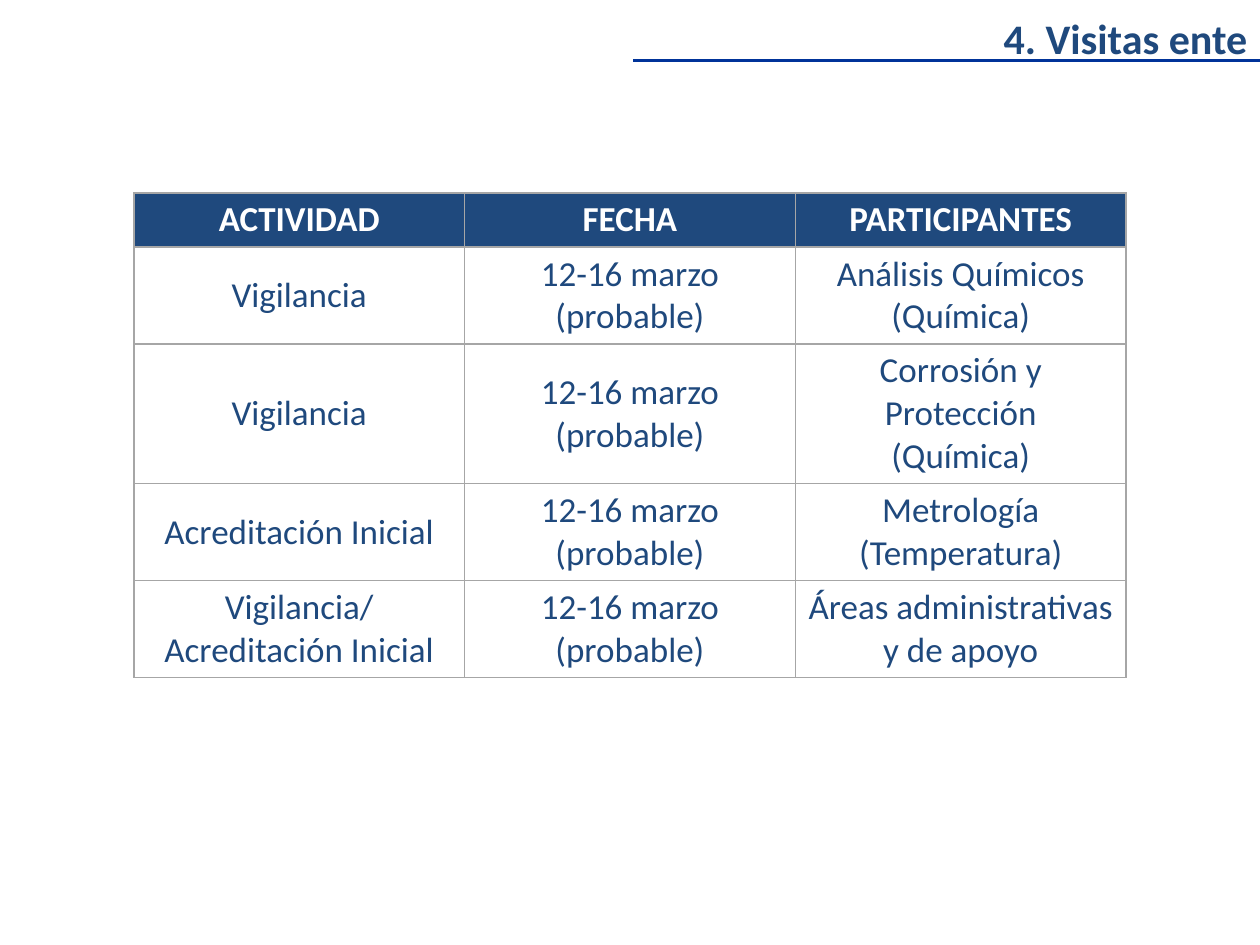
from lxml import etree
from pptx import Presentation
from pptx.dml.color import RGBColor
from pptx.enum.shapes import MSO_CONNECTOR
from pptx.enum.text import MSO_ANCHOR, MSO_AUTO_SIZE, PP_ALIGN
from pptx.oxml import parse_xml
from pptx.oxml.ns import nsdecls, qn
from pptx.util import Pt

STRAIGHT = MSO_CONNECTOR.STRAIGHT
TOP, MIDDLE = MSO_ANCHOR.TOP, MSO_ANCHOR.MIDDLE
CENTER, RIGHT = PP_ALIGN.CENTER, PP_ALIGN.RIGHT
NO_AUTOFIT = MSO_AUTO_SIZE.NONE

NAVY, RULE_BLUE, GREY, WHITE = "1F497D", "003399", "A6A6A6", "FFFFFF"
TITLE_ONLY = 5
COLUMN_WIDTH = 189
ROW_HEIGHTS = [31, 55.2, 79, 55.2, 55.2]
PROBABLE_DATE = "12-16 marzo\n(probable)"
HEADINGS = ["ACTIVIDAD", "FECHA", "PARTICIPANTES"]
VISITS = [
    ("Vigilancia", "Análisis Químicos\n(Química)"),
    ("Vigilancia", "Corrosión y Protección\n(Química)"),
    ("Acreditación Inicial", "Metrología\n(Temperatura)"),
    ("Vigilancia/ Acreditación Inicial", "Áreas administrativas y de apoyo"),
]


def color(hex_code):
    """Return the colour for a hex string."""
    return RGBColor.from_string(hex_code)


def write(frame, text, size=20, ink=NAVY, bold=False, align=CENTER):
    """Write text into a frame, one paragraph for each line."""
    frame.text = text
    for paragraph in frame.paragraphs:
        paragraph.alignment = align
        font = paragraph.runs[0].font
        font.name, font.size, font.bold = "Calibri", Pt(size), bold
        font.color.rgb = color(ink)


def add_heading(slide, text):
    """Place the slide title at the top right."""
    title = slide.shapes.title
    title.left, title.top = Pt(360), Pt(3.6)
    title.width, title.height = Pt(360), Pt(36)
    frame = title.text_frame
    frame.word_wrap, frame.auto_size = True, NO_AUTOFIT
    frame.vertical_anchor = TOP
    write(frame, text, size=24, bold=True, align=RIGHT)


def add_rule(slide):
    """Draw the line under the title."""
    rule = slide.shapes.add_connector(STRAIGHT, Pt(720), Pt(34.5), Pt(361.5), Pt(34.5))
    rule.line.color.rgb = color(RULE_BLUE)
    rule.line.width = Pt(1.5)
    etree.SubElement(rule._element.spPr, qn("a:effectLst"))


def add_borders(cell):
    """Give a cell a thin grey border on every side."""
    properties = cell._tc.get_or_add_tcPr()
    for side in ("lnL", "lnR", "lnT", "lnB"):
        properties.append(parse_xml(
            f'<a:{side} {nsdecls("a")} w="{Pt(1)}"><a:solidFill>'
            f'<a:srgbClr val="{GREY}"/></a:solidFill></a:{side}>'))


def fill_cell(cell, text, is_header):
    """Format one table cell and write its text."""
    cell.margin_left = cell.margin_right = Pt(6.4)
    cell.margin_top = cell.margin_bottom = Pt(3.2)
    cell.vertical_anchor = TOP if is_header else MIDDLE
    add_borders(cell)
    if is_header:
        cell.fill.solid()
        cell.fill.fore_color.rgb = color(NAVY)
    else:
        cell.fill.background()
    write(cell.text_frame, text, ink=WHITE if is_header else NAVY, bold=is_header)


def add_visits_table(slide):
    """Add the table of planned visits."""
    contents = [HEADINGS] + [(activity, PROBABLE_DATE, participants)
                             for activity, participants in VISITS]
    table = slide.shapes.add_table(
        len(contents), len(HEADINGS), Pt(76.5), Pt(110.2),
        Pt(COLUMN_WIDTH * len(HEADINGS)), Pt(sum(ROW_HEIGHTS))).table
    table.horz_banding = False
    for column in table.columns:
        column.width = Pt(COLUMN_WIDTH)
    for index, (row, texts) in enumerate(zip(table.rows, contents)):
        row.height = Pt(ROW_HEIGHTS[index])
        for cell, text in zip(row.cells, texts):
            fill_cell(cell, text, is_header=index == 0)


def main():
    """Build and save the slide."""
    deck = Presentation()
    deck.slide_width, deck.slide_height = Pt(720), Pt(540)
    slide = deck.slides.add_slide(deck.slide_layouts[TITLE_ONLY])
    add_rule(slide)
    add_heading(slide, "4. Visitas ente")
    add_visits_table(slide)
    deck.save("out.pptx")


if __name__ == "__main__":
    main()
